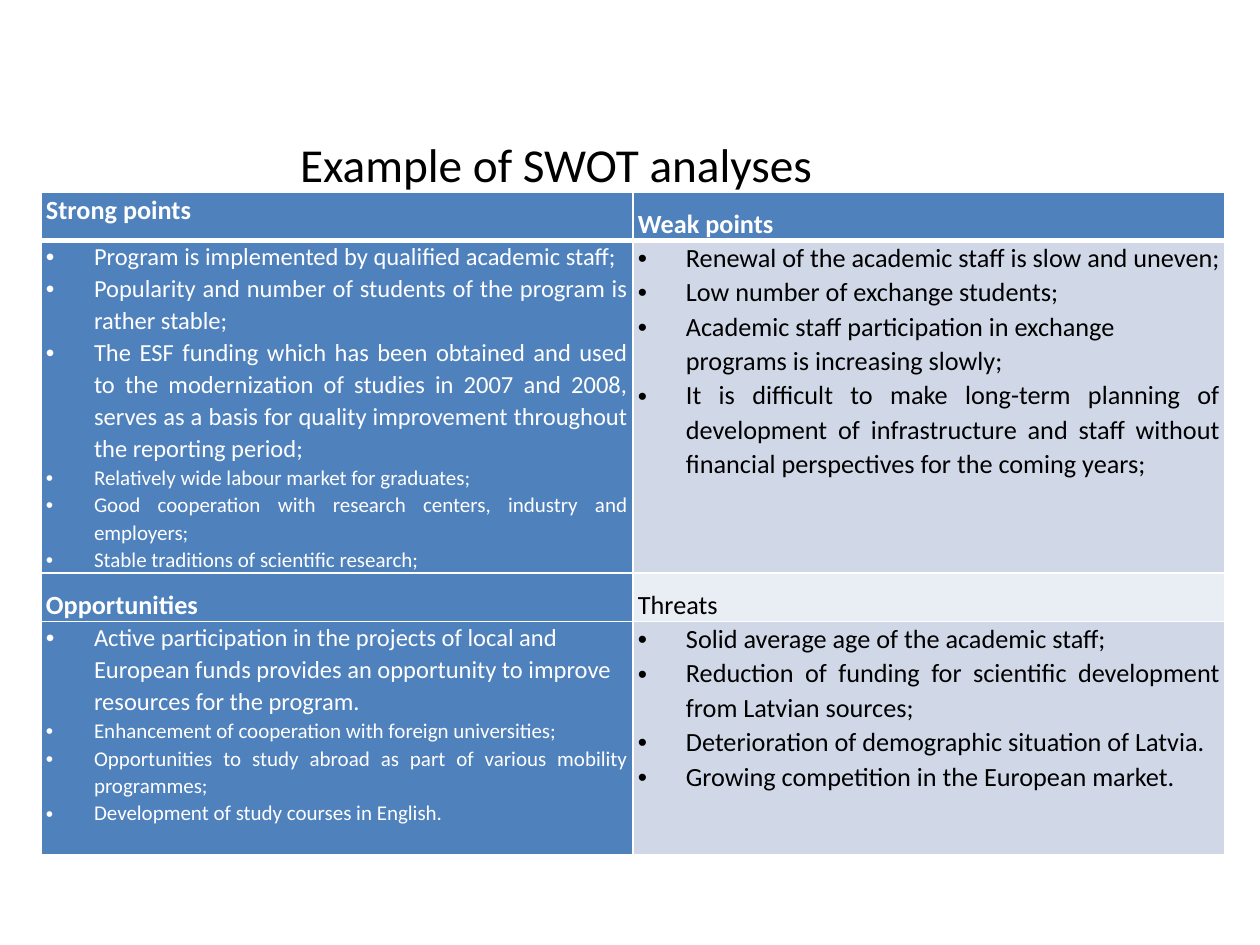
import pptx
import pptx.util
import pptx.dml.color
import pptx.enum.text
import pptx.oxml
from pptx.oxml.ns import qn
from lxml import etree

FONT = "Calibri"
BLUE, PALE, MIST = "4F81BD", "D0D8E8", "E9EDF4"
WHITE, BLACK = "FFFFFF", "000000"
ALIGN = pptx.enum.text.PP_ALIGN
LEFT, BOTH = ALIGN.LEFT, ALIGN.JUSTIFY

# Each point: size, alignment, text
STRONG = [
    (14, LEFT, "Program is implemented by qualified academic staff;"),
    (14, BOTH, "Popularity and number of students of the program is rather stable;"),
    (14, BOTH, "The ESF funding which has been obtained and used to the modernization "
               "of studies in 2007 and 2008, serves as a basis for quality improvement "
               "throughout the reporting period;"),
    (12, BOTH, "Relatively wide labour market for graduates;"),
    (12, BOTH, "Good cooperation with research centers, industry and employers;"),
    (12, BOTH, "Stable traditions of scientific research;"),
]
WEAK = [
    (15, LEFT, "Renewal of the academic staff is slow and uneven;"),
    (15, LEFT, "Low number of exchange students;"),
    (15, LEFT, "Academic staff participation in exchange programs is increasing slowly;"),
    (15, BOTH, "It is difficult to make long-term planning of development of "
               "infrastructure and staff without financial perspectives for the "
               "coming years;"),
]
CHANCES = [
    (14, LEFT, "Active participation in the projects of local and European funds "
               "provides an opportunity to improve resources for the program."),
    (12, BOTH, "Enhancement of cooperation with foreign universities;"),
    (12, BOTH, "Opportunities to study abroad as part of various mobility programmes;"),
    (12, LEFT, "Development of study courses in English."),
]
THREATS = [
    (15, LEFT, "Solid average age of the academic staff;"),
    (15, BOTH, "Reduction of funding for scientific development from Latvian sources;"),
    (15, BOTH, "Deterioration of demographic situation of Latvia."),
    (15, BOTH, "Growing competition in the European market."),
]


def px(n):
    return pptx.util.Emu(round(n * 914400 / 126))


def color(code):
    return pptx.dml.color.RGBColor.from_string(code)


def add_run(para, text, size, ink, bold=False):
    run = para.add_run()
    run.text = text
    font = run.font
    font.name, font.size, font.bold = FONT, pptx.util.Pt(size), bold
    font.color.rgb = color(ink)


def add_title(slide, text):
    title = slide.shapes.title
    title.left, title.top, title.width, title.height = map(px, (13, 136, 1086, 55))
    frame = title.text_frame
    frame.word_wrap = True
    frame.auto_size = pptx.enum.text.MSO_AUTO_SIZE.NONE
    frame.vertical_anchor = pptx.enum.text.MSO_ANCHOR.MIDDLE
    para = frame.paragraphs[0]
    para.alignment = ALIGN.CENTER
    add_run(para, text, 27, BLACK)


def add_edge(cell, side, width):
    props = cell._tc.get_or_add_tcPr()
    line = etree.SubElement(props, qn("a:ln" + side), w=str(pptx.util.Pt(width)))
    fill = etree.SubElement(line, qn("a:solidFill"))
    etree.SubElement(fill, qn("a:srgbClr"), val=WHITE)


def style_cell(cell, fill, top=1, bottom=1):
    cell.margin_left = cell.margin_right = px(5)
    cell.margin_top = cell.margin_bottom = 0
    for side, width in zip("LRTB", (1, 1, top, bottom)):
        add_edge(cell, side, width)
    cell.fill.solid()
    cell.fill.fore_color.rgb = color(fill)


def add_head(cell, text, ink, bold, space):
    para = cell.text_frame.paragraphs[0]
    para.line_spacing = space
    add_run(para, text, 15, ink, bold)


def add_points(cell, points, ink):
    frame = cell.text_frame
    for i, (size, align, text) in enumerate(points):
        para = frame.add_paragraph() if i else frame.paragraphs[0]
        props = para._p.get_or_add_pPr()
        props.set("marL", str(px(48)))
        props.set("indent", str(px(-48)))
        etree.SubElement(props, qn("a:buFont"), typeface="Arial")
        etree.SubElement(props, qn("a:buChar"), char="•")
        para.alignment = align
        para.line_spacing = 1.07
        add_run(para, text, size, ink)


def add_grid(slide):
    rows = (48, 320, 48, 233)
    grid = slide.shapes.add_table(4, 2, px(41), px(192), px(1184), px(sum(rows))).table
    grid.first_row = grid.horz_banding = False
    for col in grid.columns:
        col.width = px(592)
    for row, high in zip(grid.rows, rows):
        row.height = px(high)
    return grid


def main():
    deck = pptx.Presentation()
    deck.slide_width, deck.slide_height = px(1260), px(945)
    slide = deck.slides.add_slide(deck.slide_layouts[5])
    add_title(slide, "Example of SWOT analyses")
    grid = add_grid(slide)

    # Headings: row, column, text, fill, ink, bold, line spacing
    for row, col, text, fill, ink, bold, space in (
        (0, 0, "Strong points", BLUE, WHITE, True, 1.07),
        (0, 1, "Weak points", BLUE, WHITE, True, 1.5),
        (2, 0, "Opportunities", BLUE, WHITE, True, 1.5),
        (2, 1, "Threats", MIST, BLACK, False, 1.5),
    ):
        cell = grid.cell(row, col)
        style_cell(cell, fill, bottom=1 if row else 3)
        add_head(cell, text, ink, bold, space)

    # Lists under the headings
    for row, pair in ((1, (STRONG, WEAK)), (3, (CHANCES, THREATS))):
        for col, points in enumerate(pair):
            cell = grid.cell(row, col)
            style_cell(cell, (BLUE, PALE)[col], top=3 if row == 1 else 1)
            add_points(cell, points, (WHITE, BLACK)[col])

    deck.save("out.pptx")


if __name__ == "__main__":
    main()
